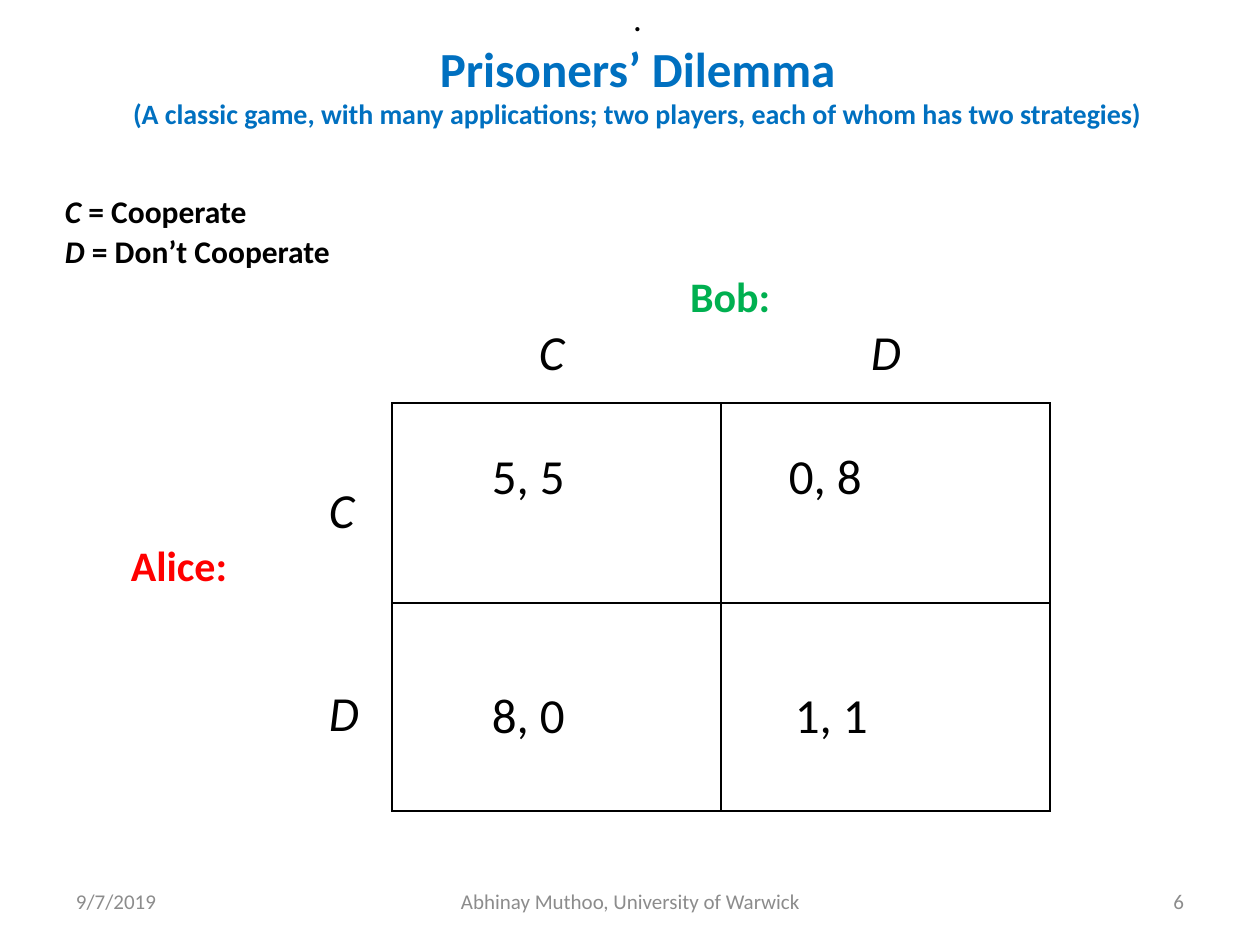
from dataclasses import dataclass

from lxml.etree import SubElement
from pptx import Presentation
from pptx.dml.color import RGBColor
from pptx.enum.text import MSO_ANCHOR, MSO_AUTO_SIZE, PP_ALIGN
from pptx.oxml.ns import qn
from pptx.util import Emu, Pt

EMU_PER_PX = 914400 / 126
FONT = "Calibri"
BLACK, BLUE, GREEN, RED, GREY = "000000", "0070C0", "00B050", "FF0000", "8C8C8C"
BORDER_WIDTH = Pt(1)


@dataclass(frozen=True)
class Label:
    text: str
    left: int
    top: int
    width: int
    height: int
    size: int
    color: str = BLACK
    bold: bool = False
    italic: bool = False
    align: PP_ALIGN = PP_ALIGN.LEFT
    anchor: MSO_ANCHOR = MSO_ANCHOR.TOP


@dataclass(frozen=True)
class Payoff:
    text: str
    row: int
    column: int
    indent: int
    drop: int


TITLE_LINES = [
    (".", 20, BLACK, False),
    ("Prisoners’ Dilemma", 28, BLUE, True),
    ("(A classic game, with many applications; two players, "
     "each of whom has two strategies)", 16, BLUE, True),
]
STRATEGIES = [("C", " = Cooperate"), ("D", " = Don’t Cooperate")]
LABELS = [
    Label("Bob:", 690, 271, 120, 52, 24, GREEN, bold=True),
    Label("Alice:", 131, 540, 140, 52, 24, RED, bold=True),
    Label("C", 539, 322, 50, 60, 28, italic=True),
    Label("D", 871, 322, 50, 60, 28, italic=True),
    Label("C", 329, 480, 50, 60, 28, italic=True),
    Label("D", 329, 683, 50, 60, 28, italic=True),
    Label("9/7/2019", 76, 876, 268, 50, 12, GREY, anchor=MSO_ANCHOR.MIDDLE),
    Label("Abhinay Muthoo, University of Warwick", 431, 876, 399, 50, 12, GREY,
          align=PP_ALIGN.CENTER, anchor=MSO_ANCHOR.MIDDLE),
    Label("6", 916, 876, 268, 50, 12, GREY,
          align=PP_ALIGN.RIGHT, anchor=MSO_ANCHOR.MIDDLE),
]
PAYOFFS = [
    Payoff("5, 5", 0, 0, 100, 45),
    Payoff("0, 8", 0, 1, 68, 45),
    Payoff("8, 0", 1, 0, 100, 84),
    Payoff("1, 1", 1, 1, 74, 84),
]
ROW_HEIGHTS = [200, 208]
COLUMN_WIDTH = 329


def px(length: int) -> Emu:
    """Turn pixels into EMU."""
    return Emu(round(length * EMU_PER_PX))


def rgb(color: str) -> RGBColor:
    """Turn a hex string into a colour."""
    return RGBColor.from_string(color)


def style(font, size: int, color: str, bold: bool = False, italic: bool = False) -> None:
    """Set the look of a font."""
    font.name = FONT
    font.size = Pt(size)
    font.color.rgb = rgb(color)
    font.bold = bold
    font.italic = italic


def prepare(frame, anchor: MSO_ANCHOR = MSO_ANCHOR.TOP) -> None:
    """Give a text frame wrapping, no insets and a fixed size."""
    frame.word_wrap = True
    frame.auto_size = MSO_AUTO_SIZE.NONE
    frame.vertical_anchor = anchor
    frame.margin_left = frame.margin_right = frame.margin_top = frame.margin_bottom = 0


def add_frame(slide, left: int, top: int, width: int, height: int, anchor=MSO_ANCHOR.TOP):
    """Add a text box and return its prepared frame."""
    frame = slide.shapes.add_textbox(px(left), px(top), px(width), px(height)).text_frame
    prepare(frame, anchor)
    return frame


def fill_title(title) -> None:
    """Place the title placeholder and write its lines."""
    title.left, title.top, title.width, title.height = px(24), px(-4), px(1227), px(138)
    frame = title.text_frame
    prepare(frame)
    frame.text = "\n".join(line[0] for line in TITLE_LINES)
    for paragraph, (_, size, color, bold) in zip(frame.paragraphs, TITLE_LINES):
        paragraph.alignment = PP_ALIGN.CENTER
        style(paragraph.font, size, color, bold)


def add_legend(slide) -> None:
    """Explain the strategy letters."""
    frame = add_frame(slide, 65, 192, 400, 80)
    for index, (letter, meaning) in enumerate(STRATEGIES):
        paragraph = frame.add_paragraph() if index else frame.paragraphs[0]
        if index:
            paragraph.space_before = Pt(1)
        for text, italic in ((letter, True), (meaning, False)):
            run = paragraph.add_run()
            run.text = text
            style(run.font, 18, BLACK, True, italic)


def add_label(slide, label: Label) -> None:
    """Add one line of text."""
    frame = add_frame(slide, label.left, label.top, label.width, label.height, label.anchor)
    paragraph = frame.paragraphs[0]
    paragraph.text = label.text
    paragraph.alignment = label.align
    style(paragraph.font, label.size, label.color, label.bold, label.italic)


def add_borders(cell) -> None:
    """Draw a thin black line on each side of a cell."""
    properties = cell._tc.get_or_add_tcPr()
    for side in ("a:lnL", "a:lnR", "a:lnT", "a:lnB"):
        line = SubElement(properties, qn(side), w=str(int(BORDER_WIDTH)))
        fill = SubElement(line, qn("a:solidFill"))
        SubElement(fill, qn("a:srgbClr"), val=BLACK)


def add_payoff_matrix(slide) -> None:
    """Add the two by two table of payoffs."""
    table = slide.shapes.add_table(
        2, 2, px(392), px(403), px(2 * COLUMN_WIDTH), px(sum(ROW_HEIGHTS))).table
    table.first_row = table.horz_banding = False
    for row, height in zip(table.rows, ROW_HEIGHTS):
        row.height = px(height)
    for column in table.columns:
        column.width = px(COLUMN_WIDTH)
    for payoff in PAYOFFS:
        cell = table.cell(payoff.row, payoff.column)
        cell.margin_left, cell.margin_top = px(payoff.indent), px(payoff.drop)
        add_borders(cell)
        cell.fill.background()
        paragraph = cell.text_frame.paragraphs[0]
        paragraph.text = payoff.text
        style(paragraph.font, 28, BLACK)


def main() -> None:
    """Build and save the slide."""
    presentation = Presentation()
    presentation.slide_width, presentation.slide_height = px(1260), px(945)
    slide = presentation.slides.add_slide(presentation.slide_layouts[5])
    fill_title(slide.shapes.title)
    add_legend(slide)
    add_payoff_matrix(slide)
    for label in LABELS:
        add_label(slide, label)
    presentation.save("out.pptx")


if __name__ == "__main__":
    main()
